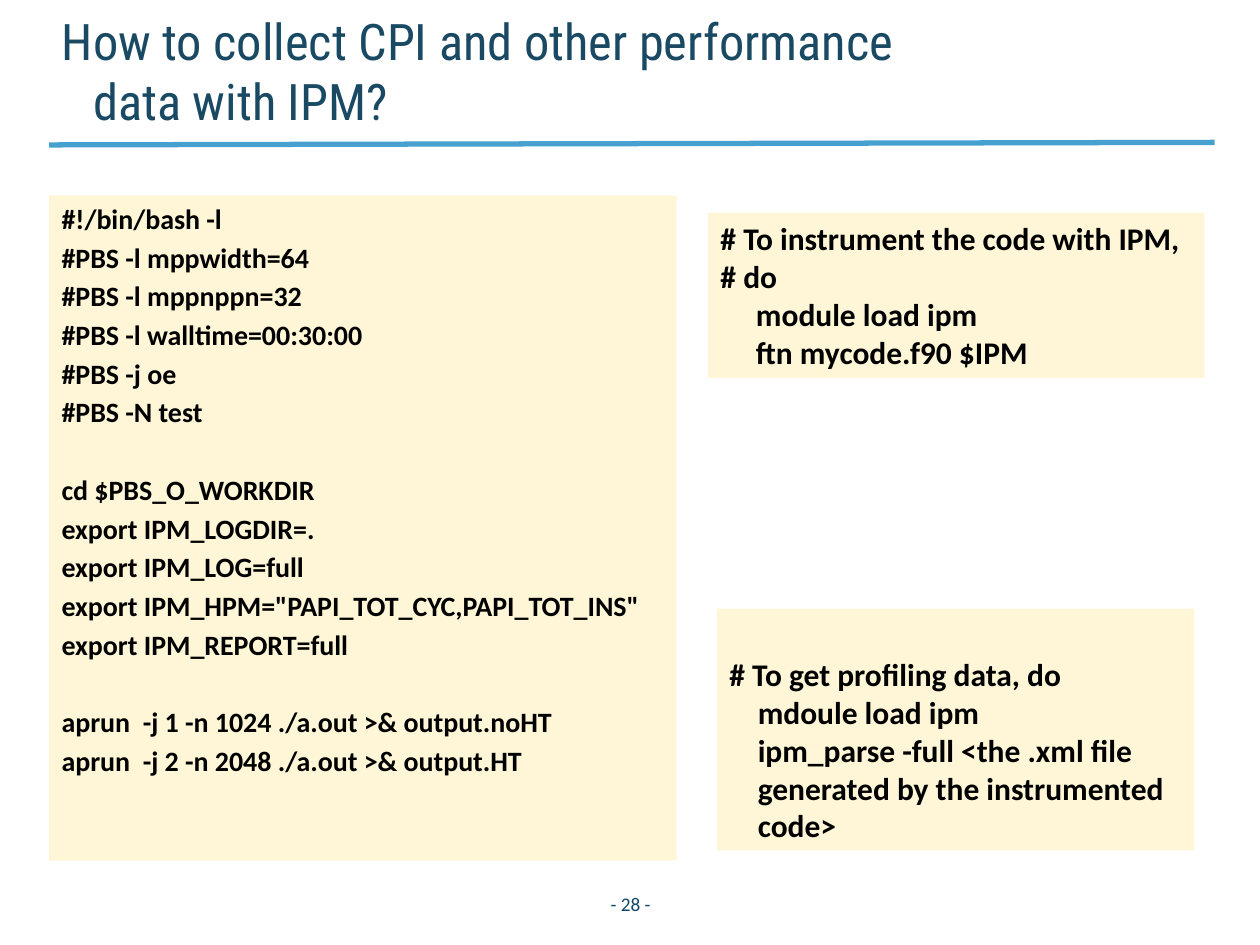
from pptx import Presentation
from pptx.dml.color import RGBColor
from pptx.enum.shapes import MSO_CONNECTOR, MSO_SHAPE
from pptx.enum.text import MSO_ANCHOR, MSO_AUTO_SIZE, PP_ALIGN
from pptx.oxml.ns import qn
from pptx.util import Inches, Pt
from lxml import etree

TOP, MIDDLE, BOTTOM = MSO_ANCHOR.TOP, MSO_ANCHOR.MIDDLE, MSO_ANCHOR.BOTTOM
LEFT, CENTER = PP_ALIGN.LEFT, PP_ALIGN.CENTER
NO_AUTOFIT = MSO_AUTO_SIZE.NONE
TITLE_ONLY = 5
CREAM, BLUE, TITLE_BLUE, FOOTER_BLUE = "FEF6D7", "46A0D0", "194963", "114766"

# Groups of lines are separated by a one-line gap
JOB_SCRIPT = [
    ["#!/bin/bash -l", "#PBS -l mppwidth=64", "#PBS -l mppnppn=32",
     "#PBS -l walltime=00:30:00", "#PBS -j oe", "#PBS -N test"],
    ["cd $PBS_O_WORKDIR", "export IPM_LOGDIR=.", "export IPM_LOG=full",
     'export IPM_HPM="PAPI_TOT_CYC,PAPI_TOT_INS"', "export IPM_REPORT=full"],
    ["aprun  -j 1 -n 1024 ./a.out >& output.noHT",
     "aprun  -j 2 -n 2048 ./a.out >& output.HT"],
]
INSTRUMENT = [["# To instrument the code with IPM,", "# do",
               "     module load ipm", "     ftn mycode.f90 $IPM"]]
PROFILE = [["# To get profiling data, do", "    mdoule load ipm",
            "    ipm_parse -full <the .xml file",
            "    generated by the instrumented", "    code>"]]


def rgb(color):
    return RGBColor.from_string(color)


def add_text(p, text, *, size, color="000000", font="Calibri", bold=False,
             align=LEFT, before=0):
    p.alignment = align
    p.space_before = Pt(before)
    r = p.add_run()
    r.text = text
    r.font.size = Pt(size)
    r.font.name = font
    r.font.bold = bold
    r.font.color.rgb = rgb(color)


def add_title(s, text, box):
    sp = s.shapes.title
    sp.left, sp.top, sp.width, sp.height = map(Inches, box)
    tf = sp.text_frame
    tf.word_wrap = True
    tf.auto_size = NO_AUTOFIT
    tf.vertical_anchor = BOTTOM
    tf.margin_left = tf.margin_right = Inches(0.1)
    tf.margin_top = tf.margin_bottom = 0
    p = tf.paragraphs[0]
    add_text(p, text, size=28.8, color=TITLE_BLUE, font="Roboto Condensed")
    # Hanging indent
    pPr = p._p.get_or_add_pPr()
    pPr.set("marL", str(Inches(0.25)))
    pPr.set("indent", str(Inches(-0.25)))


def add_rule(s, start, end):
    line = s.shapes.add_connector(MSO_CONNECTOR.STRAIGHT,
                                  *map(Inches, start + end))
    line.line.color.rgb = rgb(BLUE)
    line.line.width = Pt(3)
    etree.SubElement(line._element.spPr, qn("a:effectLst"))


def add_code_box(s, groups, box, *, size, before=0, gap=0, anchor=TOP):
    sp = s.shapes.add_shape(MSO_SHAPE.RECTANGLE, *map(Inches, box))
    sp.shadow.inherit = False
    sp.fill.solid()
    sp.fill.fore_color.rgb = rgb(CREAM)
    sp.line.fill.background()
    tf = sp.text_frame
    tf.word_wrap = True
    tf.vertical_anchor = anchor
    p = None
    for group in groups:
        for i, text in enumerate(group):
            first = p is None
            p = tf.paragraphs[0] if first else tf.add_paragraph()
            space = 0 if first else before + (gap if i == 0 else 0)
            add_text(p, text, size=size, bold=True, before=space)


def add_page_number(s, text, box):
    tf = s.shapes.add_textbox(*map(Inches, box)).text_frame
    tf.word_wrap = True
    tf.vertical_anchor = MIDDLE
    add_text(tf.paragraphs[0], text, size=11, color=FOOTER_BLUE, align=CENTER)


def main():
    prs = Presentation()
    prs.slide_width, prs.slide_height = Inches(10), Inches(7.5)
    s = prs.slides.add_slide(prs.slide_layouts[TITLE_ONLY])

    # Heading
    add_rule(s, (0.39, 1.15), (9.64, 1.13))
    add_title(s, "How to collect CPI and other performance data with IPM?",
              (0.39, 0.2, 7.46, 0.84))

    # Job script on the left, commands on the right
    add_code_box(s, JOB_SCRIPT, (0.39, 1.55, 4.98, 5.28), size=16,
                 before=2.9, gap=22.4)
    add_code_box(s, INSTRUMENT, (5.62, 1.69, 3.94, 1.31), size=18)
    add_code_box(s, PROFILE, (5.69, 4.83, 3.79, 1.92), size=18, anchor=BOTTOM)

    # Footer
    add_page_number(s, "- 28 -", (4.5, 6.97, 1.01, 0.4))
    prs.save("out.pptx")


if __name__ == "__main__":
    main()
